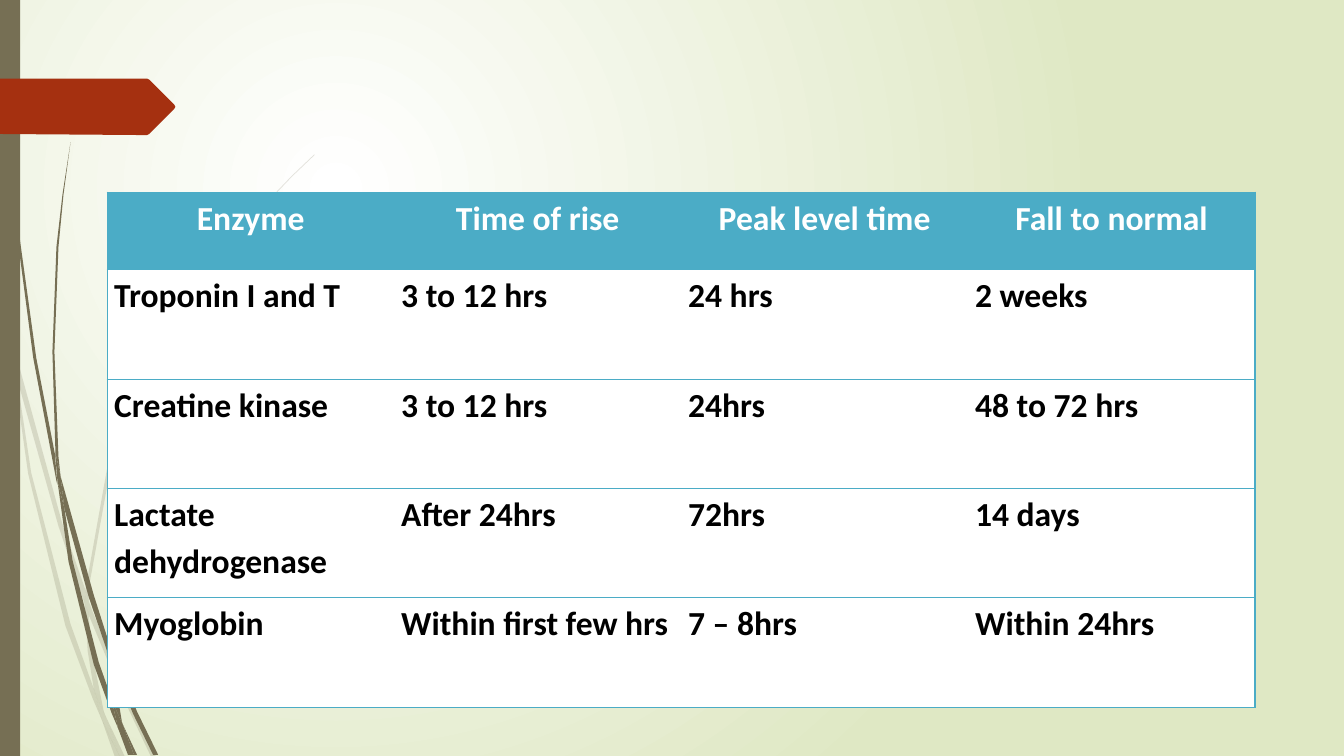
"""Build a slide with a table of cardiac enzyme timings on a grassy background."""
from dataclasses import dataclass

import lxml.etree
import pptx
import pptx.dml.color
import pptx.enum.shapes
import pptx.enum.text
import pptx.oxml.ns
import pptx.util

Pt = pptx.util.Pt
qn = pptx.oxml.ns.qn
Point = tuple[int, int]

GRID = Pt(0.72)
OLIVE, RED, TEAL, WHITE, BLACK = "766F54", "A53010", "4BACC6", "FFFFFF", "000000"


@dataclass
class Tuft:
    opacity: int
    blades: list[list[Point]]


@dataclass
class Row:
    height: float
    fill: str
    color: str
    align: pptx.enum.text.PP_ALIGN
    texts: list[str]


PALE_TUFT = Tuft(20, [
    [(11, 350), (9, 322), (0, 282), (0, 299), (10, 344)],
    [(58, 522), (84, 599), (85, 586), (62, 520), (14, 345), (17, 376)],
    [(92, 607), (88, 596), (88, 610), (123, 694), (150, 751), (155, 751), (127, 692)],
    [(119, 751), (124, 751), (105, 711)],
    [(93, 683), (70, 619), (31, 469), (17, 376), (11, 350), (28, 470), (65, 621),
     (92, 693), (101, 714), (99, 707)],
    [(84, 599), (87, 646), (93, 683), (96, 692), (105, 711), (103, 706), (91, 646),
     (88, 610), (88, 608)],
    [(88, 584), (110, 462), (160, 349), (229, 245), (268, 198), (290, 175), (312, 154),
     (312, 153), (289, 175), (268, 197), (228, 244), (158, 348), (107, 461), (85, 584),
     (85, 586), (88, 596)],
    [(101, 714), (114, 751), (119, 751)],
    [(88, 608), (88, 610), (88, 596), (85, 586), (84, 599)],
    [(96, 692), (93, 683), (99, 707), (101, 714), (119, 751), (105, 711)],
])

DARK_TUFT = Tuft(100, [
    [(7, 110), (17, 233), (33, 355), (56, 477), (57, 481), (55, 457), (55, 453), (36, 355),
     (19, 232), (8, 109), (5, 48), (4, 0), (3, 0), (4, 48)],
    [(88, 592), (106, 645), (106, 633), (106, 631), (93, 590), (60, 472), (64, 505)],
    [(113, 649), (110, 641), (111, 656), (132, 708), (152, 749), (157, 749), (136, 706)],
    [(110, 691), (98, 657), (72, 556), (64, 505), (57, 477), (68, 557), (93, 659),
     (111, 708), (117, 722), (116, 717)],
    [(60, 472), (58, 453), (54, 349), (58, 245), (63, 193), (70, 141), (62, 193),
     (56, 245), (52, 349), (55, 449)],
    [(133, 749), (136, 749), (122, 719)],
    [(57, 477), (64, 505), (60, 472), (55, 449), (55, 453)],
    [(111, 633), (125, 552), (158, 476), (205, 406), (231, 374), (245, 359), (261, 344),
     (260, 344), (245, 358), (231, 373), (204, 405), (156, 474), (122, 551), (106, 631),
     (110, 641)],
    [(117, 722), (127, 749), (131, 749)],
    [(106, 645), (110, 691), (116, 706), (122, 719), (121, 716), (111, 656), (109, 651)],
    [(106, 645), (109, 651), (111, 656), (110, 641), (106, 631), (106, 633)],
    [(116, 706), (110, 691), (116, 717), (117, 722), (130, 749), (133, 749), (122, 719)],
])

ARROW = [(173, 108), (148, 133), (146, 134), (136, 134), (0, 133), (0, 78), (146, 78),
         (148, 79), (173, 104), (174, 106)]

LEFT, CENTER = pptx.enum.text.PP_ALIGN.LEFT, pptx.enum.text.PP_ALIGN.CENTER
BODY = (78.1, WHITE, BLACK, LEFT)
ROWS = [
    Row(55.4, TEAL, WHITE, CENTER,
        ["Enzyme", "Time of rise", "Peak level time", "Fall to normal"]),
    Row(*BODY, ["Troponin I and T", "3 to 12 hrs", "24 hrs", "2 weeks"]),
    Row(*BODY, ["Creatine kinase", "3 to 12 hrs", "24hrs", "48 to 72 hrs"]),
    Row(*BODY, ["Lactate dehydrogenase", "After 24hrs", "72hrs", "14 days"]),
    Row(*BODY, ["Myoglobin", "Within first few hrs", "7 – 8hrs", "Within 24hrs"]),
]


def rgb(color: str) -> pptx.dml.color.RGBColor:
    return pptx.dml.color.RGBColor.from_string(color)


def paint(sp, color: str, opacity: int = 100) -> None:
    sp.shadow.inherit = False
    sp.line.fill.background()
    sp.fill.solid()
    sp.fill.fore_color.rgb = rgb(color)
    if opacity < 100:
        clr = sp.element.spPr.find(".//" + qn("a:srgbClr"))
        lxml.etree.SubElement(clr, qn("a:alpha"), val=str(opacity * 1000))


def add_outline(s, points: list[Point], color: str, opacity: int = 100):
    builder = s.shapes.build_freeform(*points[0], scale=GRID)
    builder.add_line_segments(points[1:], close=True)
    sp = builder.convert_to_shape()
    paint(sp, color, opacity)
    return sp


def add_tuft(s, tuft: Tuft) -> None:
    s.shapes.add_group_shape([add_outline(s, b, OLIVE, tuft.opacity) for b in tuft.blades])


def set_background(s) -> None:
    fill = s.background.fill
    fill.gradient()
    for stop, position, color in zip(fill.gradient_stops, (0, 1), (WHITE, "DFE8C4")):
        stop.position = position
        stop.color.rgb = rgb(color)
    grad = s.element.find(".//" + qn("a:gradFill"))
    circle = lxml.etree.Element(qn("a:path"), path="circle")
    lxml.etree.SubElement(circle, qn("a:fillToRect"), l="50000", t="50000",
                          r="100000", b="100000")
    grad.replace(grad.find(qn("a:lin")), circle)


def add_borders(cell, sides: str) -> None:
    tc_pr = cell._tc.get_or_add_tcPr()
    for i, side in enumerate(sides):
        ln = lxml.etree.Element(qn("a:ln" + side), w=str(Pt(1)))
        fill = lxml.etree.SubElement(ln, qn("a:solidFill"))
        lxml.etree.SubElement(fill, qn("a:srgbClr"), val=TEAL)
        tc_pr.insert(i, ln)


def fill_cell(cell, text: str, row: Row) -> None:
    cell.margin_left = cell.margin_right = Pt(5)
    cell.margin_top = cell.margin_bottom = Pt(0)
    cell.fill.solid()
    cell.fill.fore_color.rgb = rgb(row.fill)
    p = cell.text_frame.paragraphs[0]
    p.text = text
    p.alignment = row.align
    p.line_spacing = 1.15
    p.font.name = "Calibri"
    p.font.size = Pt(24)
    p.font.bold = True
    p.font.color.rgb = rgb(row.color)


def add_enzyme_table(s) -> None:
    frame = s.shapes.add_table(len(ROWS), 4, Pt(76.6), Pt(137.3), Pt(820), Pt(367.8))
    table = frame.table
    table.first_row = table.horz_banding = False
    style = frame.element.find(".//" + qn("a:tableStyleId"))
    style.text = "{2D5ABB26-0587-4C30-8999-92F81FD0307C}"
    for r, row in enumerate(ROWS):
        table.rows[r].height = Pt(row.height)
        for c, text in enumerate(row.texts):
            fill_cell(table.cell(r, c), text, row)
            add_borders(table.cell(r, c), {0: "LTB", 3: "RTB"}.get(c, "TB"))


def main() -> None:
    prs = pptx.Presentation()
    prs.slide_width, prs.slide_height = Pt(960), Pt(540)
    s = prs.slides.add_slide(prs.slide_layouts[6])
    set_background(s)
    add_tuft(s, PALE_TUFT)
    add_tuft(s, DARK_TUFT)
    rectangle = pptx.enum.shapes.MSO_SHAPE.RECTANGLE
    paint(s.shapes.add_shape(rectangle, Pt(0), Pt(0), Pt(14.4), Pt(540)), OLIVE)
    add_outline(s, ARROW, RED)
    add_enzyme_table(s)
    prs.save("out.pptx")


if __name__ == "__main__":
    main()
